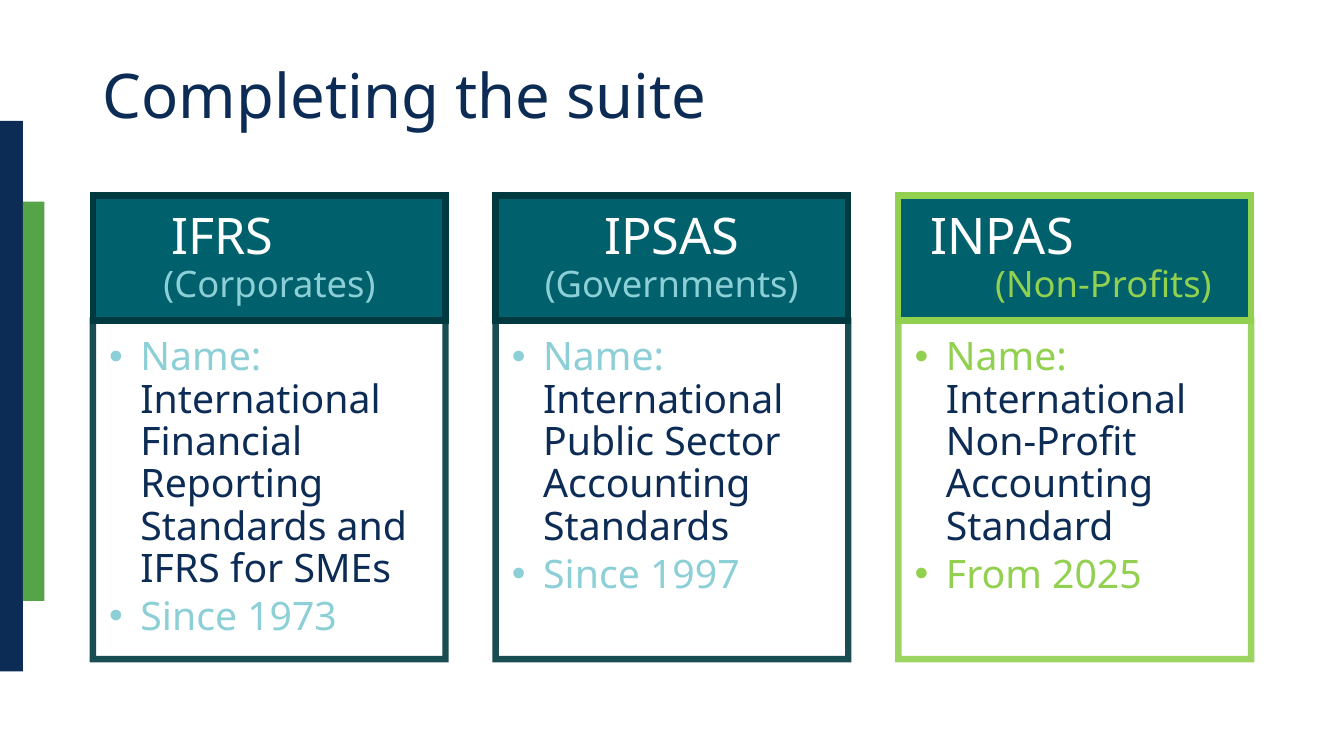
"""Builds a slide that sets three accounting standards side by side."""
from lxml import etree
from pptx import Presentation
from pptx import util as u
from pptx.dml.color import RGBColor
from pptx.enum import shapes, text
from pptx.oxml import ns

HUES = {"navy": "0C2C56", "green": "56A448", "teal": "00616C", "dark": "003A40",
        "pale": "8DCFD6", "lime": "92D050", "white": "FFFFFF"}
FONT = "Noto Sans"
LEFT, STEP, WIDTH = 2.34, 10.15, 8.89
TOP, HEAD, BODY = 4.93, 3.15, 8.53
CARDS = [
    ("IFRS", 1.27, "(Corporates)", 1.07,
     "International Financial Reporting Standards and IFRS for SMEs",
     "Since 1973", "dark", "pale"),
    ("IPSAS", 2.03, "(Governments)", 0.53,
     "International Public Sector Accounting Standards",
     "Since 1997", "dark", "pale"),
    ("INPAS", 0.1, "(Non-Profits)", 1.73,
     "International Non-Profit Accounting Standard",
     "From 2025", "lime", "lime"),
]


def hue(name):
    return RGBColor.from_string(HUES[name])


def place(shape, left, top, width, height):
    shape.left, shape.top = u.Cm(left), u.Cm(top)
    shape.width, shape.height = u.Cm(width), u.Cm(height)


def rect(slide, box, fill):
    shape = slide.shapes.add_shape(shapes.MSO_SHAPE.RECTANGLE, *map(u.Cm, box))
    shape.shadow.inherit = False
    shape.fill.solid()
    shape.fill.fore_color.rgb = hue(fill)
    shape.line.fill.background()
    return shape


def edge(shape, color, alpha=100):
    shape.line.width = u.Pt(4.5)
    shape.line.color.rgb = hue(color)
    line = shape.element.spPr.find(ns.qn("a:ln"))
    etree.SubElement(line, ns.qn("a:miter"), lim="800000")
    if alpha < 100:
        tone = line.find(".//" + ns.qn("a:srgbClr"))
        etree.SubElement(tone, ns.qn("a:alpha"), val=str(alpha * 1000))


def frame(shape, anchor, left, top, right, base):
    box = shape.text_frame
    box.word_wrap = True
    box.auto_size = text.MSO_AUTO_SIZE.NONE
    box.vertical_anchor = anchor
    box.margin_left, box.margin_top = u.Cm(left), u.Cm(top)
    box.margin_right, box.margin_bottom = u.Cm(right), u.Cm(base)
    return box


def para(box, first, after=0):
    item = box.paragraphs[0] if first else box.add_paragraph()
    item.alignment = text.PP_ALIGN.LEFT
    item.line_spacing = 0.9
    item.space_before, item.space_after = u.Pt(0), u.Pt(after)
    return item


def indent(item, left, hang=0):
    props = item._p.get_or_add_pPr()
    props.set("marL", str(u.Cm(left)))
    props.set("indent", str(-u.Cm(hang)))
    return props


def bullet(item):
    props = indent(item, 0.79, 0.79)
    etree.SubElement(props, ns.qn("a:buFont"), typeface="Arial")
    etree.SubElement(props, ns.qn("a:buChar"), char="•")


def run(item, words, size, color):
    part = item.add_run()
    part.text = words
    part.font.name, part.font.size = FONT, u.Pt(size)
    part.font.bold = False
    part.font.color.rgb = hue(color)


def title(slide, words):
    shape = slide.shapes.title
    place(shape, LEFT, 0.64, 29.21, 3.68)
    box = frame(shape, text.MSO_ANCHOR.MIDDLE, 0.25, 0.13, 0.25, 0.13)
    run(para(box, True), words, 44, "navy")


def header(slide, left, lines, line):
    shape = rect(slide, (left, TOP, WIDTH, HEAD), "teal")
    edge(shape, line)
    box = frame(shape, text.MSO_ANCHOR.MIDDLE, 0.71, 0.41, 0.2, 0.41)
    for row, (words, shift, size, color) in enumerate(lines):
        item = para(box, row == 0)
        indent(item, shift)
        run(item, words, size, color)


def points(shape, left, name, date, line, tint):
    place(shape, left, TOP + HEAD, WIDTH, BODY)
    edge(shape, line, 90)
    box = frame(shape, text.MSO_ANCHOR.TOP, 0.41, 0.41, 0.56, 0.61)
    rows = [[("Name: ", tint), (name, "navy")], [(date, tint)]]
    for row, parts in enumerate(rows):
        item = para(box, row == 0, 4)
        bullet(item)
        for words, color in parts:
            run(item, words, 28, color)


def main():
    deck = Presentation()
    deck.slide_width, deck.slide_height = u.Cm(33.87), u.Cm(19.05)
    slide = deck.slides.add_slide(deck.slide_layouts[4])
    rect(slide, (0, 3.05, 0.58, 13.87), "navy")
    rect(slide, (0.58, 5.08, 0.54, 10.06), "green")
    title(slide, "Completing the suite")
    holders = list(slide.placeholders)[1:]
    for col, (code, near, group, far, name, date, line, tint) in enumerate(CARDS):
        left = LEFT + col * STEP
        points(holders[col], left, name, date, line, tint)
        header(slide, left, [(code, near, 36, "white"), (group, far, 26, tint)], line)
    for spare in holders[len(CARDS):]:
        spare.element.getparent().remove(spare.element)
    deck.save("out.pptx")


if __name__ == "__main__":
    main()
